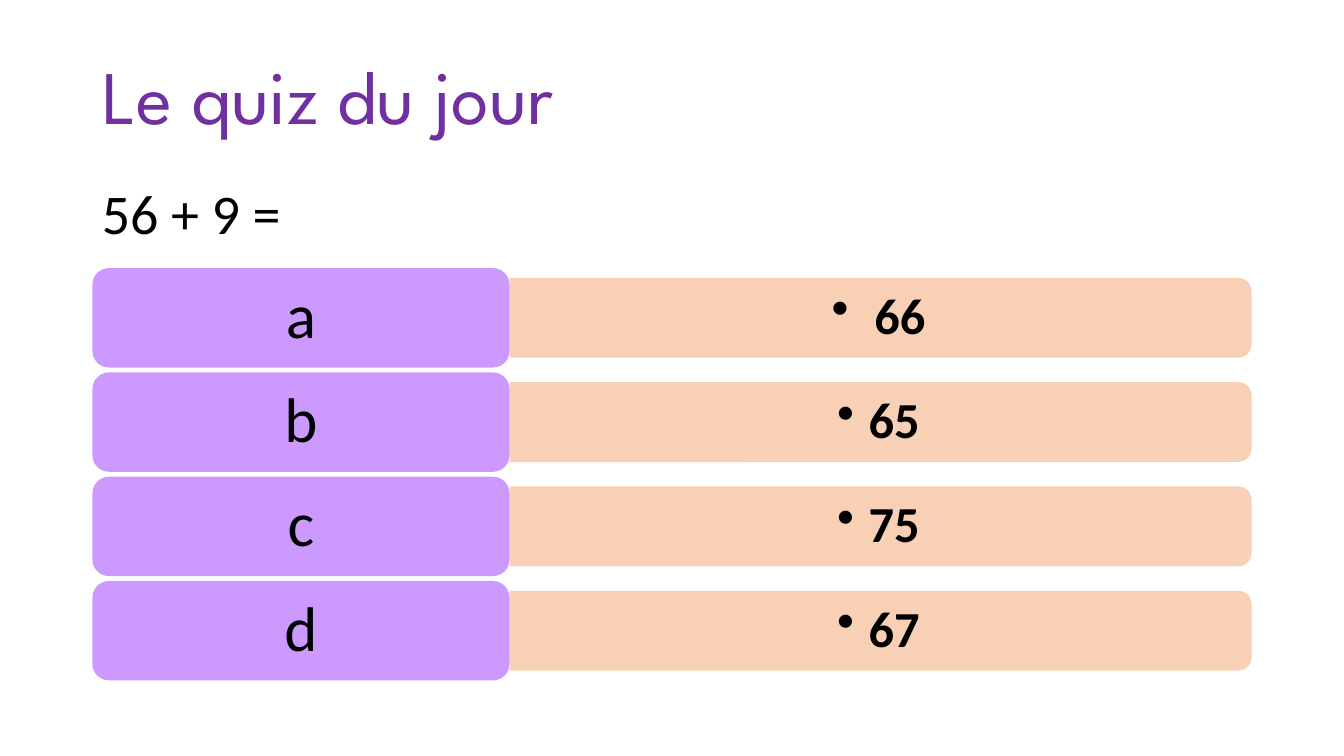
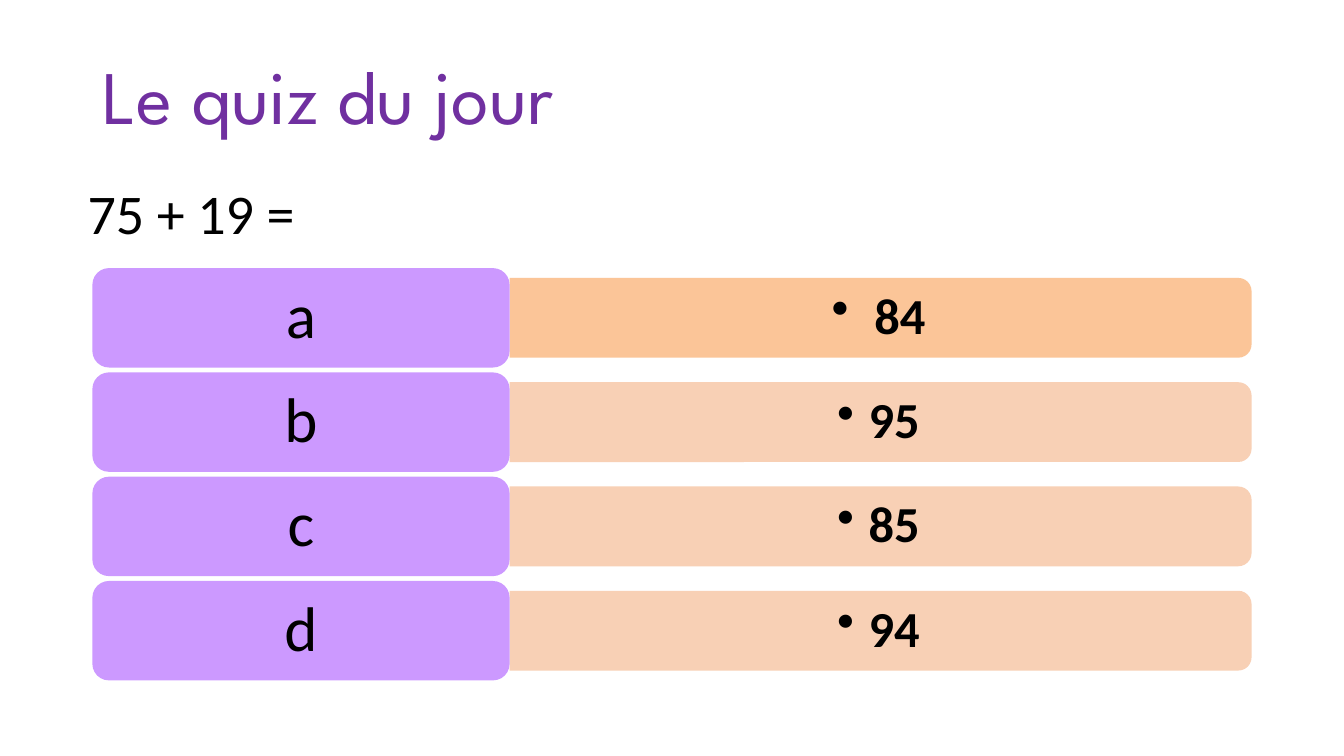
"""Build two daily mental-arithmetic quiz slides."""
from lxml import etree
from pptx import Presentation
from pptx.dml.color import RGBColor
from pptx.enum.shapes import MSO_SHAPE
from pptx.enum.text import MSO_ANCHOR, MSO_AUTO_SIZE, PP_ALIGN
from pptx.oxml.ns import qn
from pptx.util import Pt

LEFT, CENTER = PP_ALIGN.LEFT, PP_ALIGN.CENTER
MIDDLE, TOP = MSO_ANCHOR.MIDDLE, MSO_ANCHOR.TOP
ROUNDED, TOP_ROUNDED = MSO_SHAPE.ROUNDED_RECTANGLE, MSO_SHAPE.ROUND_2_SAME_RECTANGLE

PURPLE, LILAC, PEACH, ORANGE, BLACK = "7030A0", "CC99FF", "F8CBAD", "FBBF8D", "000000"
LABEL_X, LABEL_W, LABEL_H = 66, 298, 71
BAR_X, BAR_W, BAR_H = LABEL_X + LABEL_W, 530, 57
FIRST_Y, STEP = 227, 74.5
INDENT = 22.5

QUIZZES = [
    ("56 + 9 =", [" 66", "65", "75", "67"], [PEACH] * 4),
    ("75 + 19 =", [" 84", "95", "85", "94"], [ORANGE] + [PEACH] * 3),
]


def write(sp, text, size, font="Calibri", color=BLACK, bold=False, align=CENTER,
          anchor=MIDDLE, spacing=0.9, bullet=False):
    tf = sp.text_frame
    tf.word_wrap = True
    tf.auto_size = MSO_AUTO_SIZE.NONE
    tf.vertical_anchor = anchor
    p = tf.paragraphs[0]
    p.alignment = align
    p.line_spacing = spacing
    r = p.add_run()
    r.text = text
    r.font.name = font
    r.font.size = Pt(size)
    r.font.bold = bold
    r.font.color.rgb = RGBColor.from_string(color)
    if bullet:
        pPr = p._p.get_or_add_pPr()
        pPr.set("marL", str(Pt(INDENT)))
        pPr.set("indent", str(-Pt(INDENT)))
        etree.SubElement(pPr, qn("a:buChar"), char="•")


def add_block(slide, kind, x, y, w, h, color):
    sp = slide.shapes.add_shape(kind, Pt(x), Pt(y), Pt(w), Pt(h))
    sp.shadow.inherit = False
    sp.fill.solid()
    sp.fill.fore_color.rgb = RGBColor.from_string(color)
    sp.line.fill.background()
    return sp


prs = Presentation()
prs.slide_width, prs.slide_height = Pt(960), Pt(540)

for question, answers, colors in QUIZZES:
    slide = prs.slides.add_slide(prs.slide_layouts[5])
    title = slide.shapes.title
    title.left, title.top, title.width, title.height = Pt(66), Pt(19.5), Pt(828), Pt(104)
    write(title, "Le quiz du jour", 54, font="League Spartan", color=PURPLE, align=LEFT)

    for i, (letter, answer, color) in enumerate(zip("abcd", answers, colors)):
        mid = FIRST_Y + i * STEP
        bar = add_block(slide, TOP_ROUNDED, BAR_X + (BAR_W - BAR_H) / 2, mid - BAR_W / 2,
                        BAR_H, BAR_W, color)
        bar.rotation = 90
        rgb = bar._element.spPr.find(".//" + qn("a:srgbClr"))
        etree.SubElement(rgb, qn("a:alpha"), val="90000")

        box = slide.shapes.add_textbox(Pt(BAR_X), Pt(mid - 25.5), Pt(527), Pt(51))
        write(box, answer, 36, bold=True, bullet=True)

        label = add_block(slide, ROUNDED, LABEL_X, mid - LABEL_H / 2, LABEL_W, LABEL_H, LILAC)
        write(label, letter, 45)

    box = slide.shapes.add_textbox(Pt(25), Pt(124), Pt(223), Pt(55.5))
    write(box, question, 40, anchor=TOP, spacing=1.0)

prs.save("out.pptx")
